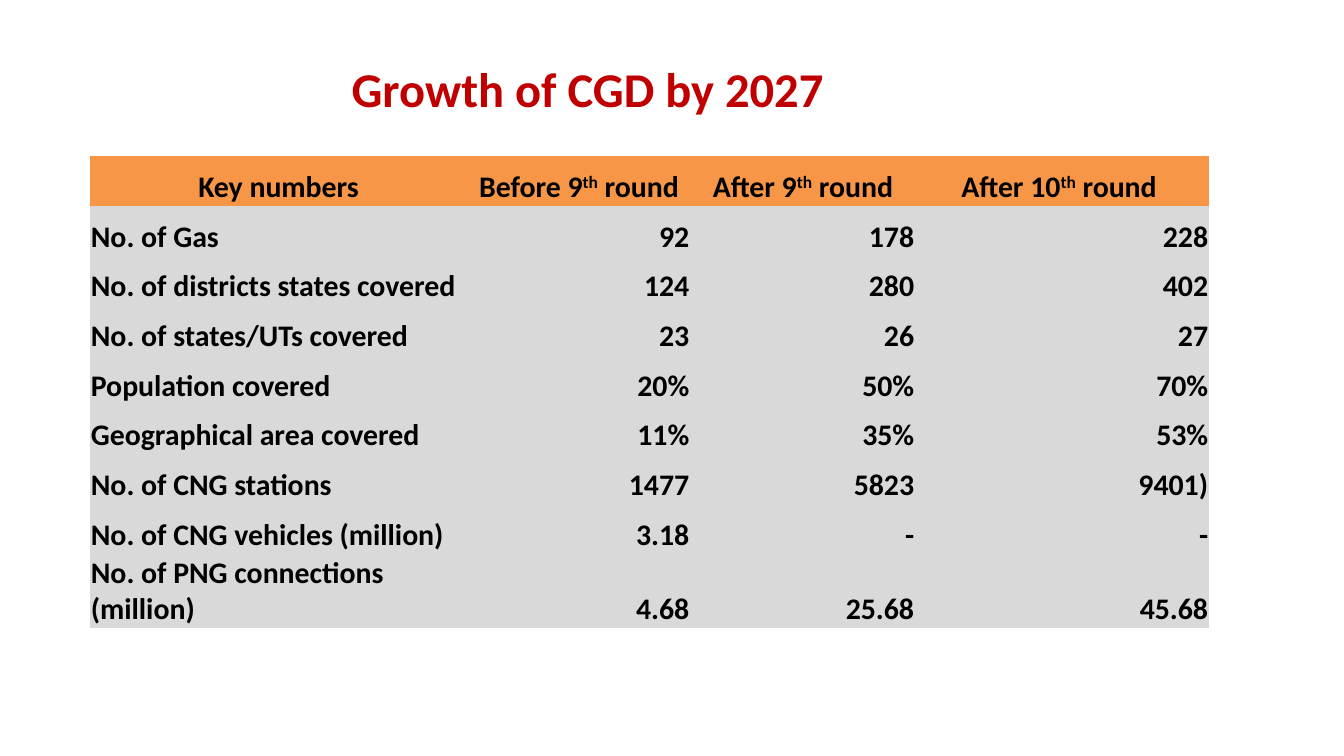
import pptx
import pptx.dml.color
import pptx.enum.text
import pptx.util

TITLE_RED = pptx.dml.color.RGBColor(0xC0, 0x00, 0x00)
HEADER_ORANGE = pptx.dml.color.RGBColor(0xF7, 0x96, 0x46)
BODY_GREY = pptx.dml.color.RGBColor(0xD9, 0xD9, 0xD9)
BLACK = pptx.dml.color.RGBColor(0x00, 0x00, 0x00)
PLAIN_TABLE_STYLE = "{2D5ABB26-0587-4C30-8999-92F81FD0307C}"
COLUMN_WIDTHS = (202.5, 119.5, 120.5, 157.5)
ROW_HEIGHT = 26.64
ROWS = (
    ("Key numbers", "Before 9th round", "After 9th round", "After 10th round "),
    ("No. of Gas", "92", "178", "228"),
    ("No. of districts states covered", "124", "280", "402"),
    ("No. of states/UTs covered", "23", "26", "27"),
    ("Population covered", "20%", "50%", "70%"),
    ("Geographical area covered", "11%", "35%", "53%"),
    ("No. of CNG stations", "1477", "5823", "9401)"),
    ("No. of CNG vehicles (million)", "3.18", "-", "-"),
    ("No. of PNG connections (million)", "4.68", "25.68", "45.68"),
)


def add_run(paragraph, text, size, color):
    """Add a bold Calibri run and return it."""
    run = paragraph.add_run()
    run.text = text
    run.font.name = "Calibri"
    run.font.size = pptx.util.Pt(size)
    run.font.bold = True
    run.font.color.rgb = color
    return run


def add_title(slide, text):
    """Add the centred slide title."""
    points = pptx.util.Pt
    shape = slide.shapes.add_textbox(points(-6), points(12), points(642), points(70.5))
    text_frame = shape.text_frame
    text_frame.word_wrap = True
    text_frame.vertical_anchor = pptx.enum.text.MSO_ANCHOR.MIDDLE
    paragraph = text_frame.paragraphs[0]
    paragraph.alignment = pptx.enum.text.PP_ALIGN.CENTER
    add_run(paragraph, text, 26, TITLE_RED)


def fill_cell(cell, text, fill, alignment):
    """Write a cell, raising the ordinal ending when it has one."""
    cell.fill.solid()
    cell.fill.fore_color.rgb = fill
    cell.vertical_anchor = pptx.enum.text.MSO_ANCHOR.BOTTOM
    cell.margin_left = cell.margin_top = cell.margin_right = pptx.util.Pt(0.72)
    cell.margin_bottom = pptx.util.Pt(0)
    paragraph = cell.text_frame.paragraphs[0]
    paragraph.alignment = alignment
    for part in filter(None, text.partition("th")):
        run = add_run(paragraph, part, 16, BLACK)
        if part == "th":
            run._r.get_or_add_rPr().set("baseline", "30000")


def add_growth_table(slide):
    """Add the table of key numbers per bidding round."""
    points = pptx.util.Pt
    shape = slide.shapes.add_table(
        len(ROWS), len(COLUMN_WIDTHS), points(48), points(83.5),
        points(sum(COLUMN_WIDTHS)), points(ROW_HEIGHT * len(ROWS)))
    table = shape.table
    table.first_row = table.horz_banding = False
    table._tbl.tblPr[0].text = PLAIN_TABLE_STYLE
    for column, width in zip(table.columns, COLUMN_WIDTHS):
        column.width = points(width)
    align = pptx.enum.text.PP_ALIGN
    for row_index, values in enumerate(ROWS):
        table.rows[row_index].height = points(ROW_HEIGHT)
        for column_index, text in enumerate(values):
            if row_index == 0:
                fill, alignment = HEADER_ORANGE, align.CENTER
            else:
                fill = BODY_GREY
                alignment = align.RIGHT if column_index else align.LEFT
            fill_cell(table.cell(row_index, column_index), text, fill, alignment)


def main():
    """Build and save the slide."""
    presentation = pptx.Presentation()
    presentation.slide_width = pptx.util.Pt(720)
    presentation.slide_height = pptx.util.Pt(405)
    slide = presentation.slides.add_slide(presentation.slide_layouts[6])
    add_growth_table(slide)
    add_title(slide, "Growth of CGD by 2027")
    presentation.save("out.pptx")


if __name__ == "__main__":
    main()
